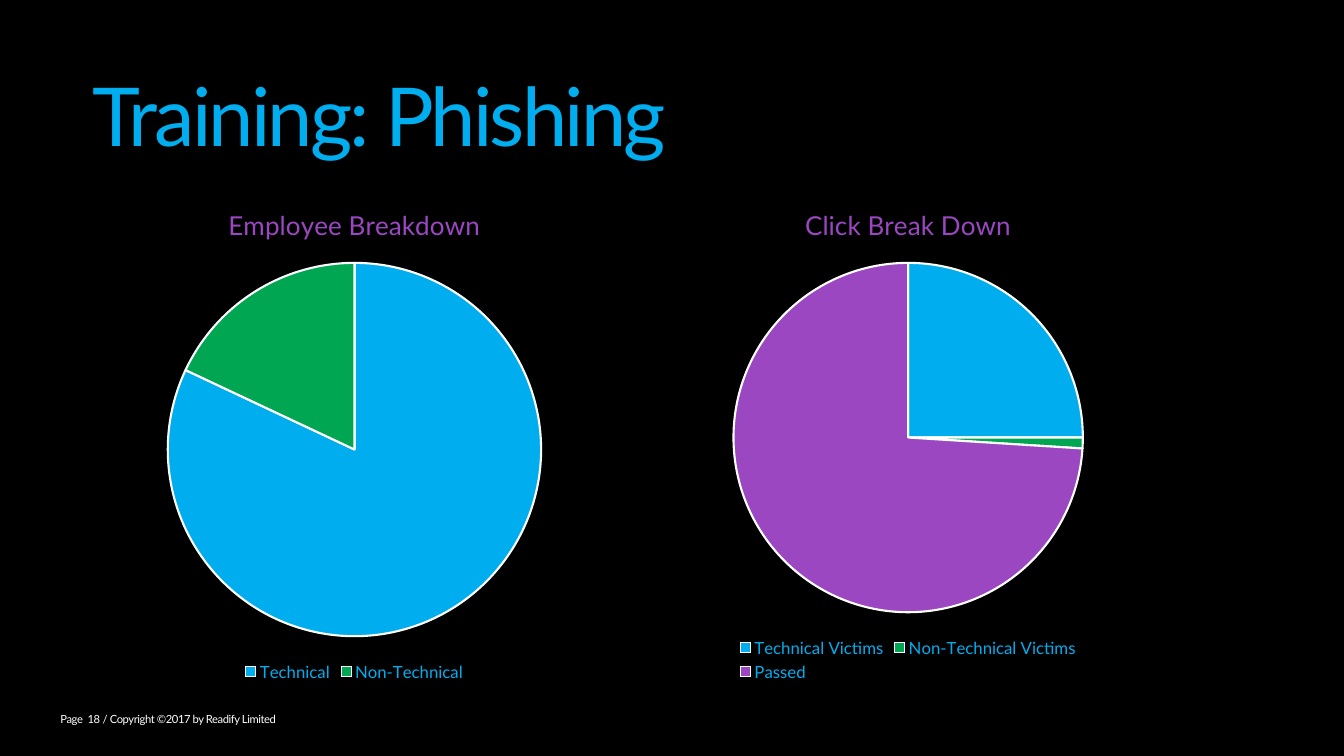
from pptx import Presentation
from pptx.chart.data import CategoryChartData
from pptx.dml.color import RGBColor
from pptx.enum.chart import XL_CHART_TYPE as ChartType, XL_LEGEND_POSITION as LegendPos
from pptx.enum.text import MSO_ANCHOR as Anchor
from pptx.util import Pt

FONT = "Lato"
BLUE, GREEN, PURPLE, WHITE = "00AEEF", "00A651", "9B47C2", "FFFFFF"


def rgb(value):
    return RGBColor.from_string(value)


def add_text(text, left, top, width, height, size=8, color=WHITE,
             tracking=-0.3, anchor=Anchor.TOP, line=None):
    """Add a text box without margins; tracking and line spacing are in points."""
    box = s.shapes.add_textbox(Pt(left), Pt(top), Pt(width), Pt(height))
    tf = box.text_frame
    tf.word_wrap = True
    tf.vertical_anchor = anchor
    tf.margin_left = tf.margin_right = tf.margin_top = tf.margin_bottom = 0
    p = tf.paragraphs[0]
    if line:
        p.line_spacing = Pt(line)
    r = p.add_run()
    r.text = text
    r.font.name, r.font.size = FONT, Pt(size)
    r.font.color.rgb = rgb(color)
    r.font._element.set("spc", str(round(tracking * 100)))


prs = Presentation()
prs.slide_width, prs.slide_height = Pt(960), Pt(540)
s = prs.slides.add_slide(prs.slide_layouts[6])
s.background.fill.solid()
s.background.fill.fore_color.rgb = rgb("000000")

add_text("Training: Phishing", 66, 26, 791, 90, size=58, color=BLUE,
         tracking=-2, anchor=Anchor.BOTTOM, line=50)

footer = [("Page", 43.2, 21.6), ("18", 62.6, 10.8),
          ("/ Copyright ©2017 by Readify Limited", 73.4, 649)]
for text, left, width in footer:
    add_text(text, left, 509, width, 24.5)

pies = [
    ("Employee Breakdown", 66, {"Technical": 82, "Non-Technical": 18}),
    ("Click Break Down", 461.5,
     {"Technical Victims": 25, "Non-Technical Victims": 1, "Passed": 74}),
]
for title, left, shares in pies:
    data = CategoryChartData()
    data.categories = list(shares)
    data.add_series(title, list(shares.values()))
    chart = s.shapes.add_chart(ChartType.PIE, Pt(left), Pt(133.2),
                               Pt(374.4), Pt(356.4), data).chart
    chart.font.name, chart.font.size = FONT, Pt(10)

    chart.has_title = True
    tf = chart.chart_title.text_frame
    tf.text = title
    font = tf.paragraphs[0].runs[0].font
    font.name, font.size, font.bold = FONT, Pt(18.6), False
    font.color.rgb = rgb(PURPLE)
    chart.chart_title.include_in_layout = False

    chart.has_legend = True
    chart.legend.position = LegendPos.BOTTOM
    chart.legend.include_in_layout = False
    font = chart.legend.font
    font.name, font.size = FONT, Pt(12)
    font.color.rgb = rgb(BLUE)

    plot = chart.plots[0]
    plot.vary_by_categories = True
    for i, color in enumerate([BLUE, GREEN, PURPLE][:len(shares)]):
        fmt = plot.series[0].points[i].format
        fmt.fill.solid()
        fmt.fill.fore_color.rgb = rgb(color)
        fmt.line.width = Pt(1.5)
        fmt.line.color.rgb = rgb(WHITE)

prs.save("out.pptx")
